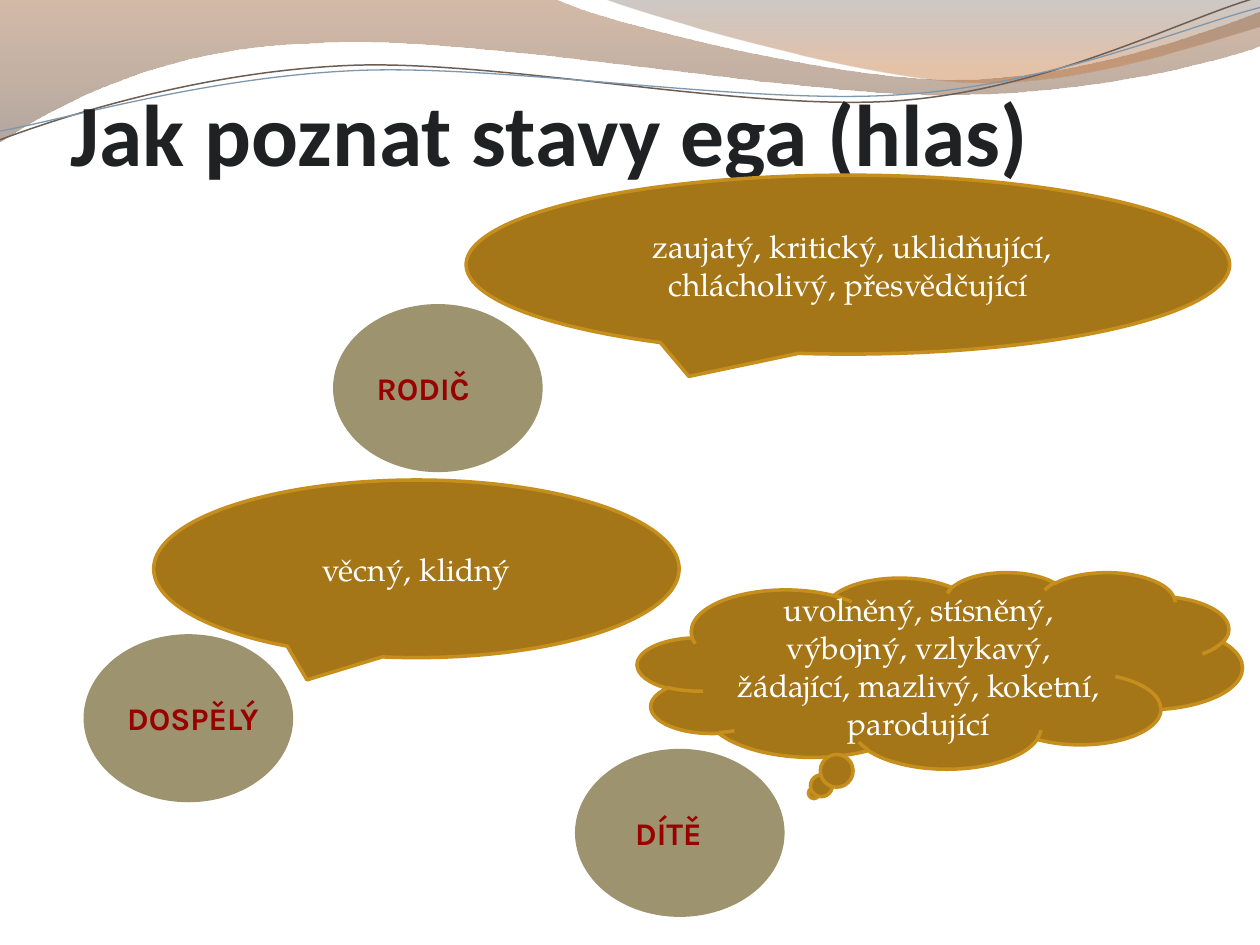
"""Build the slide on recognising ego states by voice."""
from lxml import etree
from pptx import Presentation
from pptx.dml.color import RGBColor
from pptx.enum.shapes import MSO_SHAPE
from pptx.enum.text import MSO_ANCHOR, PP_ALIGN
from pptx.oxml.ns import qn
from pptx.util import Inches, Pt

ELLIPSE = MSO_SHAPE.OVAL
SPEECH = MSO_SHAPE.OVAL_CALLOUT
THOUGHT = MSO_SHAPE.CLOUD_CALLOUT
LEFT, CENTER = PP_ALIGN.LEFT, PP_ALIGN.CENTER
MIDDLE, BOTTOM = MSO_ANCHOR.MIDDLE, MSO_ANCHOR.BOTTOM

WHITE = RGBColor(0xFF, 0xFF, 0xFF)
INK = RGBColor(0x1F, 0x21, 0x23)
RED = RGBColor(0x99, 0x00, 0x00)
KHAKI = RGBColor(0x9D, 0x93, 0x6F)
OCHRE = RGBColor(0xA5, 0x76, 0x17)
GOLD = RGBColor(0xC6, 0x8E, 0x1C)
COPPER = RGBColor(0x9F, 0x68, 0x3F)
BROWN = RGBColor(0x75, 0x5F, 0x51)
UMBER = RGBColor(0x5D, 0x4E, 0x44)
ORANGE = RGBColor(0xC7, 0x7A, 0x42)
TAUPE = RGBColor(0x6C, 0x5E, 0x55)
STEEL = RGBColor(0x7E, 0x97, 0xAD)

TITLE = "Jak poznat stavy ega (hlas)"
CIRCLE_SIZE = (1.65, 1.32)
EGO_STATES = [
    ("RODIČ", (2.65, 2.42), 0.1, SPEECH, (3.7, 1.39, 6.06, 1.42),
     " zaujatý, kritický, uklidňující, chlácholivý, přesvědčující"),
    ("DÍTĚ", (4.57, 5.95), 0.23, THOUGHT, (5.06, 4.54, 4.8, 1.56),
     "uvolněný, stísněný, výbojný, vzlykavý, žádající, mazlivý, koketní, parodující"),
    ("DOSPĚLÝ", (0.67, 5.04), 0.1, SPEECH, (1.22, 3.81, 4.17, 1.41),
     "věcný, klidný"),
]

BANDS = [
    ([(0, 0), (4.4, -0.01), (4.76, 0.17, 6.64, 0.63, 7.58, 0.63),
      (8.53, 0.63, 9.58, 0.26, 10, 0.09), (10.01, 0.36),
      (9.83, 0.44, 8.7, 0.76, 7.46, 0.75), (6.22, 0.75, 3.82, 0.28, 2.57, 0.34),
      (1.29, 0.36, 0.46, 0.83, -0.01, 1.13)],
     [(0, COPPER, 45), (1, BROWN, 55)]),
    ([(4.79, -0.01), (5.09, 0.11, 6.82, 0.62, 7.69, 0.65),
      (8.56, 0.69, 9.61, 0.32, 10, 0.21), (10, 0)],
     [(0, UMBER, 30), (0.8, ORANGE, 45)]),
]
WAVES = [
    ([(0, 1.11), (0.48, 0.93, 1.58, 0.57, 2.77, 0.52),
      (3.95, 0.47, 5.93, 0.89, 7.13, 0.8), (8.33, 0.71, 9.38, 0.15, 9.98, -0.02)],
     TAUPE, 0.85),
    ([(0, 1.04), (0.47, 0.96, 1.64, 0.61, 2.83, 0.56),
      (4.03, 0.51, 5.97, 0.84, 7.17, 0.75), (8.36, 0.67, 9.41, 0.21, 10, 0.06)],
     STEEL, 0.75),
]


def add_outline(slide, segments, close):
    """Draw segments of one end point, or of two control points and an end point."""
    ends = [tuple(map(Inches, segment[-2:])) for segment in segments]
    builder = slide.shapes.build_freeform(*ends[0], scale=1.0)
    builder.add_line_segments(ends[1:], close=close)
    outline = builder.convert_to_shape()
    outline.shadow.inherit = False
    strokes = list(outline._element.iter(qn("a:lnTo")))
    for stroke, segment in zip(strokes, segments[1:]):
        if len(segment) == 2:
            continue
        curve = etree.Element(qn("a:cubicBezTo"))
        for x, y in zip(segment[::2], segment[1::2]):
            etree.SubElement(curve, qn("a:pt"), x=str(Inches(x) - outline.left),
                             y=str(Inches(y) - outline.top))
        stroke.getparent().replace(stroke, curve)
    return outline


def add_band(slide, segments, stops):
    band = add_outline(slide, segments, True)
    band.line.fill.background()
    band.fill.gradient()
    band.fill.gradient_angle = 270
    for stop, (position, color, _) in zip(band.fill.gradient_stops, stops):
        stop.position = position
        stop.color.rgb = color
    colors = list(band._element.spPr.iter(qn("a:srgbClr")))
    for color_element, (_, _, opacity) in zip(colors, stops):
        etree.SubElement(color_element, qn("a:alpha"), val=str(opacity * 1000))


def add_wave(slide, segments, color, width):
    wave = add_outline(slide, segments, False)
    wave.fill.background()
    wave.line.color.rgb = color
    wave.line.width = Pt(width)


def write(shape, text, *, font, size, color, bold=False, align=LEFT,
          anchor=MIDDLE, wrap=True, margins=(0.1, 0.05, 0.1, 0.05)):
    frame = shape.text_frame
    frame.word_wrap = wrap
    frame.vertical_anchor = anchor
    (frame.margin_left, frame.margin_top,
     frame.margin_right, frame.margin_bottom) = map(Inches, margins)
    paragraph = frame.paragraphs[0]
    paragraph.alignment = align
    run = paragraph.add_run()
    run.text = text
    run.font.name = font
    run.font.size = Pt(size)
    run.font.bold = bold
    run.font.color.rgb = color


def add_figure(slide, preset, box, fill, line, width):
    figure = slide.shapes.add_shape(preset, *map(Inches, box))
    figure.shadow.inherit = False
    figure.fill.solid()
    figure.fill.fore_color.rgb = fill
    figure.line.color.rgb = line
    figure.line.width = Pt(width)
    return figure


def main():
    deck = Presentation()
    deck.slide_width, deck.slide_height = Inches(10), Inches(7.5)
    slide = deck.slides.add_slide(deck.slide_layouts[6])

    for segments, stops in BANDS:
        add_band(slide, segments, stops)
    for segments, color, width in WAVES:
        add_wave(slide, segments, color, width)

    heading = slide.shapes.add_textbox(*map(Inches, (0.56, 0.21, 9, 1.25)))
    write(heading, TITLE, font="Calibri", size=50, color=INK, bold=True,
          anchor=BOTTOM, margins=(0, 0.05, 0, 0))

    for state, corner, indent, preset, bubble_box, voice in EGO_STATES:
        circle = add_figure(slide, ELLIPSE, corner + CIRCLE_SIZE, KHAKI, KHAKI, 1)
        write(circle, state, font="Karla", size=18, color=RED, bold=True,
              wrap=False, margins=(indent, 0.05, 0.1, 0.05))
        bubble = add_figure(slide, preset, bubble_box, OCHRE, GOLD, 2)
        write(bubble, voice, font="TeX Gyre Pagella", size=18, color=WHITE,
              align=CENTER)

    deck.save("out.pptx")


if __name__ == "__main__":
    main()
